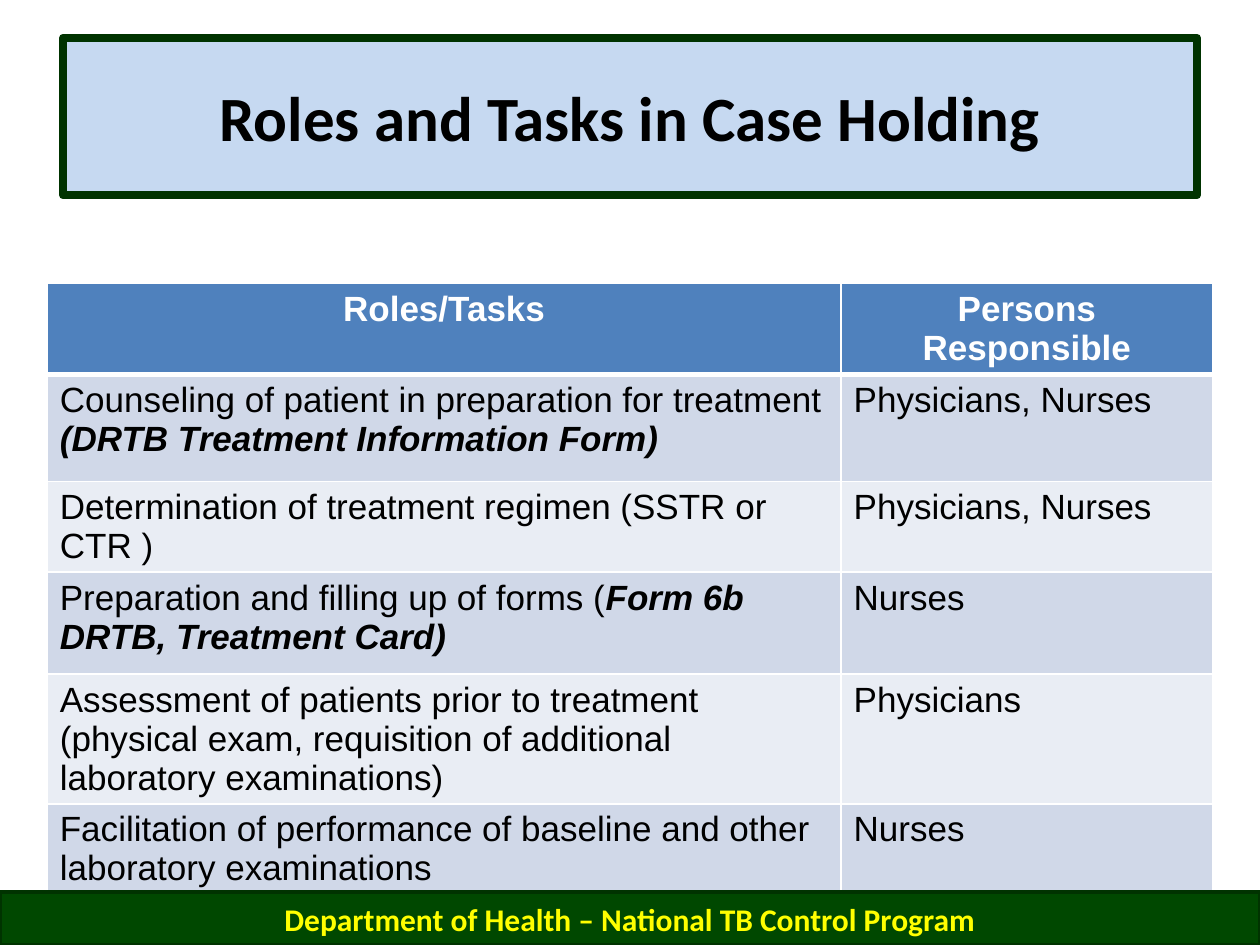
from dataclasses import dataclass

from lxml.etree import SubElement
from pptx import Presentation
from pptx.dml.color import RGBColor as Color
from pptx.enum.shapes import MSO_SHAPE as Preset
from pptx.enum.text import MSO_ANCHOR as Anchor, PP_ALIGN as Align
from pptx.oxml.ns import qn
from pptx.util import Inches, Pt


@dataclass(frozen=True)
class Theme:
    heading_font: str = "Calibri"
    body_font: str = "Arial"
    title_size: int = 36
    table_size: int = 20
    footer_size: int = 18
    ink: str = "000000"
    paper: str = "FFFFFF"
    title_fill: str = "C6D9F1"
    frame: str = "003300"
    footer_fill: str = "004800"
    footer_ink: str = "FFFF00"
    header_fill: str = "4F81BD"
    bands: tuple = ("D0D8E8", "E9EDF4")


THEME = Theme()
PAGE_WIDTH, PAGE_HEIGHT = 10, 7.5
COLUMN_WIDTHS = (6.3, 2.95)
ROW_HEIGHTS = (0.28, 0.85, 0.54, 0.81, 0.87, 0.65)
HEADINGS = ("Roles/Tasks", "Persons Responsible")
# Each task: plain wording, emphasised form name, persons responsible
TASKS = (
    ("Counseling of patient in preparation for treatment ",
     "(DRTB Treatment Information Form)", "Physicians, Nurses"),
    ("Determination of treatment regimen (SSTR or CTR )", "", "Physicians, Nurses"),
    ("Preparation and filling up of forms (",
     "Form 6b DRTB, Treatment Card)", "Nurses"),
    ("Assessment of patients prior to treatment (physical exam, "
     "requisition of additional laboratory examinations)", "", "Physicians"),
    ("Facilitation of performance of baseline and other laboratory examinations",
     "", "Nurses"),
)


def style_font(font, name, size, color, bold=False):
    font.name = name
    font.size = Pt(size)
    font.bold = bold
    font.color.rgb = Color.from_string(color)


def add_banner(page, box, text, fill, line_width, size, color):
    """Framed rectangle with one centred bold line of text."""
    banner = page.shapes.add_shape(Preset.RECTANGLE, *map(Inches, box))
    banner.shadow.inherit = False
    banner.fill.solid()
    banner.fill.fore_color.rgb = Color.from_string(fill)
    banner.line.color.rgb = Color.from_string(THEME.frame)
    banner.line.width = Pt(line_width)
    frame = banner.text_frame
    frame.word_wrap = True
    frame.vertical_anchor = Anchor.MIDDLE
    para = frame.paragraphs[0]
    para.text = text
    para.alignment = Align.CENTER
    style_font(para.font, THEME.heading_font, size, color, bold=True)


def set_borders(cell, bottom_width):
    """White rules on all four sides; they must precede the cell's fill."""
    properties = cell._tc.get_or_add_tcPr()
    for side, width in (("L", 1), ("R", 1), ("T", 1), ("B", bottom_width)):
        line = SubElement(properties, qn(f"a:ln{side}"), w=str(Pt(width)))
        fill = SubElement(line, qn("a:solidFill"))
        SubElement(fill, qn("a:srgbClr"), val=THEME.paper)


def fill_cell(cell, plain, emphasis, fill, is_header):
    set_borders(cell, 3 if is_header else 1)
    cell.fill.solid()
    cell.fill.fore_color.rgb = Color.from_string(fill)
    para = cell.text_frame.paragraphs[0]
    para.alignment = Align.CENTER if is_header else Align.LEFT
    color = THEME.paper if is_header else THEME.ink
    for text, strong in ((plain, False), (emphasis, True)):
        if text:
            span = para.add_run()
            span.text = text
            style_font(span.font, THEME.body_font, THEME.table_size, color,
                       bold=is_header or strong)
            span.font.italic = strong


def add_task_table(page, box):
    table = page.shapes.add_table(len(ROW_HEIGHTS), len(COLUMN_WIDTHS),
                                  *map(Inches, box)).table
    for column, width in zip(table.columns, COLUMN_WIDTHS):
        column.width = Inches(width)
    for row, height in zip(table.rows, ROW_HEIGHTS):
        row.height = Inches(height)
    for column, heading in enumerate(HEADINGS):
        fill_cell(table.cell(0, column), heading, "", THEME.header_fill, True)
    for index, (task, form, persons) in enumerate(TASKS):
        band = THEME.bands[index % 2]
        fill_cell(table.cell(index + 1, 0), task, form, band, False)
        fill_cell(table.cell(index + 1, 1), persons, "", band, False)


def main():
    deck = Presentation()
    deck.slide_width, deck.slide_height = Inches(PAGE_WIDTH), Inches(PAGE_HEIGHT)
    page = deck.slides.add_slide(deck.slide_layouts[6])

    margin = PAGE_WIDTH * 0.05
    add_banner(page, (margin, PAGE_HEIGHT * 0.04, PAGE_WIDTH - 2 * margin, 1.25),
               "Roles and Tasks in Case Holding", THEME.title_fill, 4.5,
               THEME.title_size, THEME.ink)

    table_width = sum(COLUMN_WIDTHS)
    add_task_table(page, ((PAGE_WIDTH - table_width) / 2, PAGE_HEIGHT * 0.3,
                          table_width, sum(ROW_HEIGHTS)))

    footer_height = 0.42
    add_banner(page, (0, PAGE_HEIGHT - footer_height, PAGE_WIDTH, footer_height),
               "Department of Health – National TB Control Program",
               THEME.footer_fill, 2, THEME.footer_size, THEME.footer_ink)
    deck.save("out.pptx")


if __name__ == "__main__":
    main()
